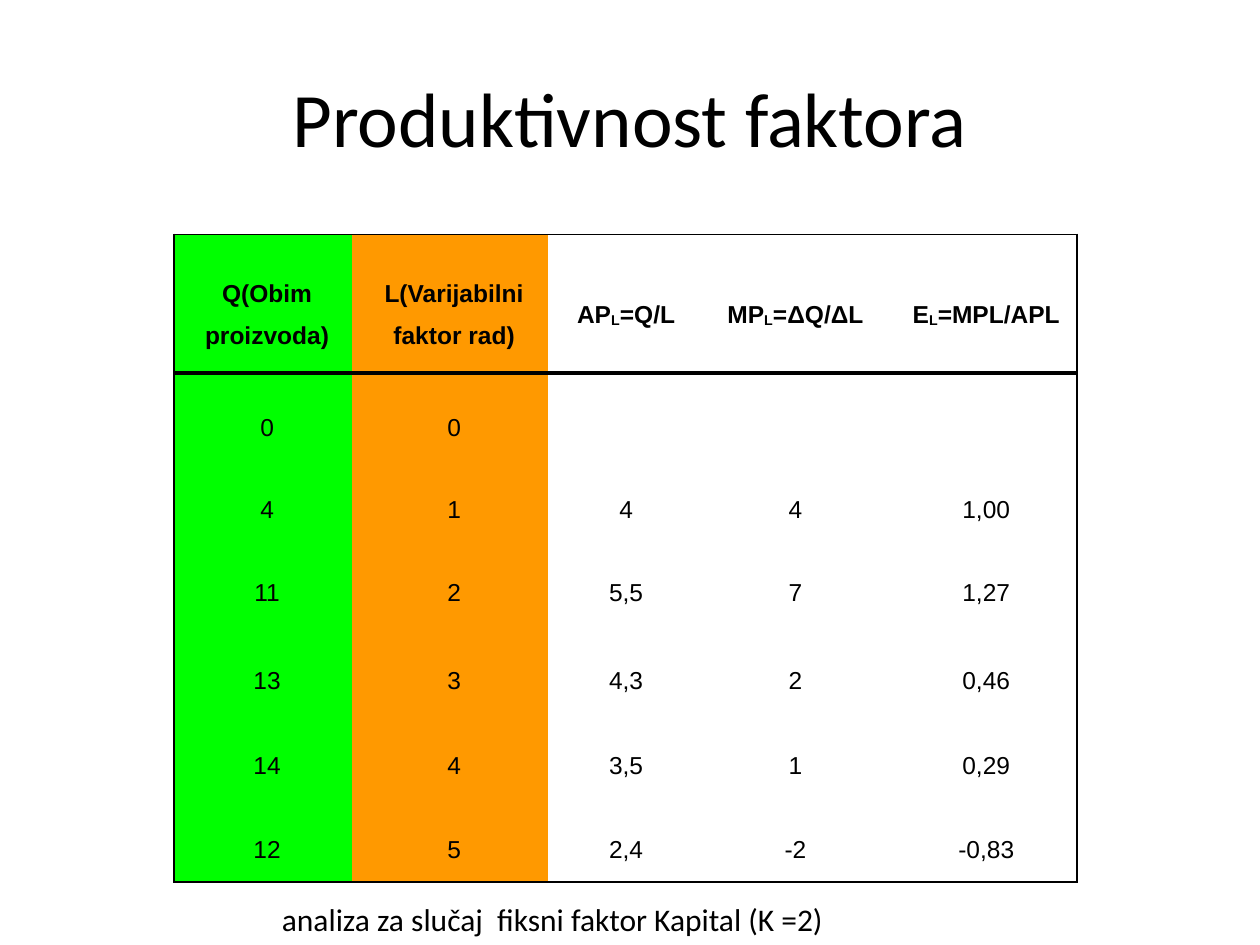
from pptx import Presentation
from pptx.dml.color import RGBColor
from pptx.enum.text import MSO_ANCHOR as Anchor, PP_ALIGN as Align
from pptx.oxml.ns import qn
from pptx.util import Pt
from lxml.etree import SubElement as Sub

TITLE = "Produktivnost faktora"
NOTE = "analiza za slučaj  fiksni faktor Kapital (K =2)"
# A header is a list of runs; the second run of three is a subscript
HEADS = [
    ["Q(Obim proizvoda)"],
    ["L(Varijabilni faktor rad)"],
    ["AP", "L", "=Q/L"],
    ["MP", "L", "=ΔQ/ΔL"],
    ["E", "L", "=MPL/APL"],
]
ROWS = [
    ["0", "0", "", "", ""],
    ["4", "1", "4", "4", "1,00"],
    ["11", "2", "5,5", "7", "1,27"],
    ["13", "3", "4,3", "2", "0,46"],
    ["14", "4", "3,5", "1", "0,29"],
    ["12", "5", "2,4", "-2", "-0,83"],
]
FILLS = ["00FF00", "FF9900", None, None, None]
WIDTHS = [101.5, 112.3, 84.2, 109.4, 108.7]
HEIGHTS = [79.2, 49.7, 44.6, 49.7, 51.1, 46.1, 49.7]
BLACK = "000000"
THIN, THICK = 1, 2.3


def color(code):
    return RGBColor.from_string(code)


def add_run(para, text, size, font, bold=False, base=0):
    run = para.add_run()
    run.text = text
    run.font.size = Pt(size)
    run.font.name = font
    run.font.bold = bold
    run.font.color.rgb = color(BLACK)
    if base:
        run._r.get_or_add_rPr().set("baseline", str(base * 1000))


def add_text(slide, box, text, size, align, anchor):
    frame = slide.shapes.add_textbox(*map(Pt, box)).text_frame
    frame.word_wrap = True
    frame.vertical_anchor = anchor
    para = frame.paragraphs[0]
    para.alignment = align
    add_run(para, text, size, "Calibri")


def set_edges(cell, edges):
    """Draw the edges that have a width and clear the others."""
    props = cell._tc.get_or_add_tcPr()
    for i, side in enumerate("LRTB"):
        line = Sub(props, qn(f"a:ln{side}"))
        props.insert(i, line)
        if side in edges:
            line.set("w", str(Pt(edges[side])))
            fill = Sub(line, qn("a:solidFill"))
            Sub(fill, qn("a:srgbClr")).set("val", BLACK)
        else:
            line.set("w", "0")
            Sub(line, qn("a:noFill"))


def find_edges(r, c):
    edges = {}
    if c == 0:
        edges["L"] = THIN
    if c == len(HEADS) - 1:
        edges["R"] = THIN
    if r < 2:
        edges["T"] = THICK if r else THIN
    if r in (0, len(ROWS)):
        edges["B"] = THIN if r else THICK
    return edges


def fill_cell(cell, parts, fill, bold):
    cell.margin_left = cell.margin_top = Pt(5)
    cell.margin_right = cell.margin_bottom = 0
    cell.vertical_anchor = Anchor.MIDDLE
    if fill:
        cell.fill.solid()
        cell.fill.fore_color.rgb = color(fill)
    else:
        cell.fill.background()
    para = cell.text_frame.paragraphs[0]
    para.alignment = Align.CENTER
    para.line_spacing = 1.5
    for i, part in enumerate(parts):
        if part:
            add_run(para, part, 14, "Arial", bold, -10 if i == 1 else 0)


def add_grid(slide):
    rows = [HEADS] + [[[text] for text in row] for row in ROWS]
    box = (99.4, 133.9, sum(WIDTHS), sum(HEIGHTS))
    table = slide.shapes.add_table(len(rows), len(HEADS), *map(Pt, box)).table
    table.first_row = table.horz_banding = False
    for col, width in zip(table.columns, WIDTHS):
        col.width = Pt(width)
    for r, row in enumerate(rows):
        table.rows[r].height = Pt(HEIGHTS[r])
        for c, parts in enumerate(row):
            cell = table.cell(r, c)
            fill_cell(cell, parts, FILLS[c], r == 0)
            set_edges(cell, find_edges(r, c))


def main():
    deck = Presentation()
    deck.slide_width, deck.slide_height = Pt(720), Pt(540)
    slide = deck.slides.add_slide(deck.slide_layouts[6])
    # Title, table, note below
    add_text(slide, (36, 21.6, 648, 90), TITLE, 44, Align.CENTER, Anchor.MIDDLE)
    add_grid(slide)
    add_text(slide, (154, 511, 407, 29), NOTE, 18, Align.LEFT, Anchor.TOP)
    deck.save("out.pptx")


if __name__ == "__main__":
    main()
